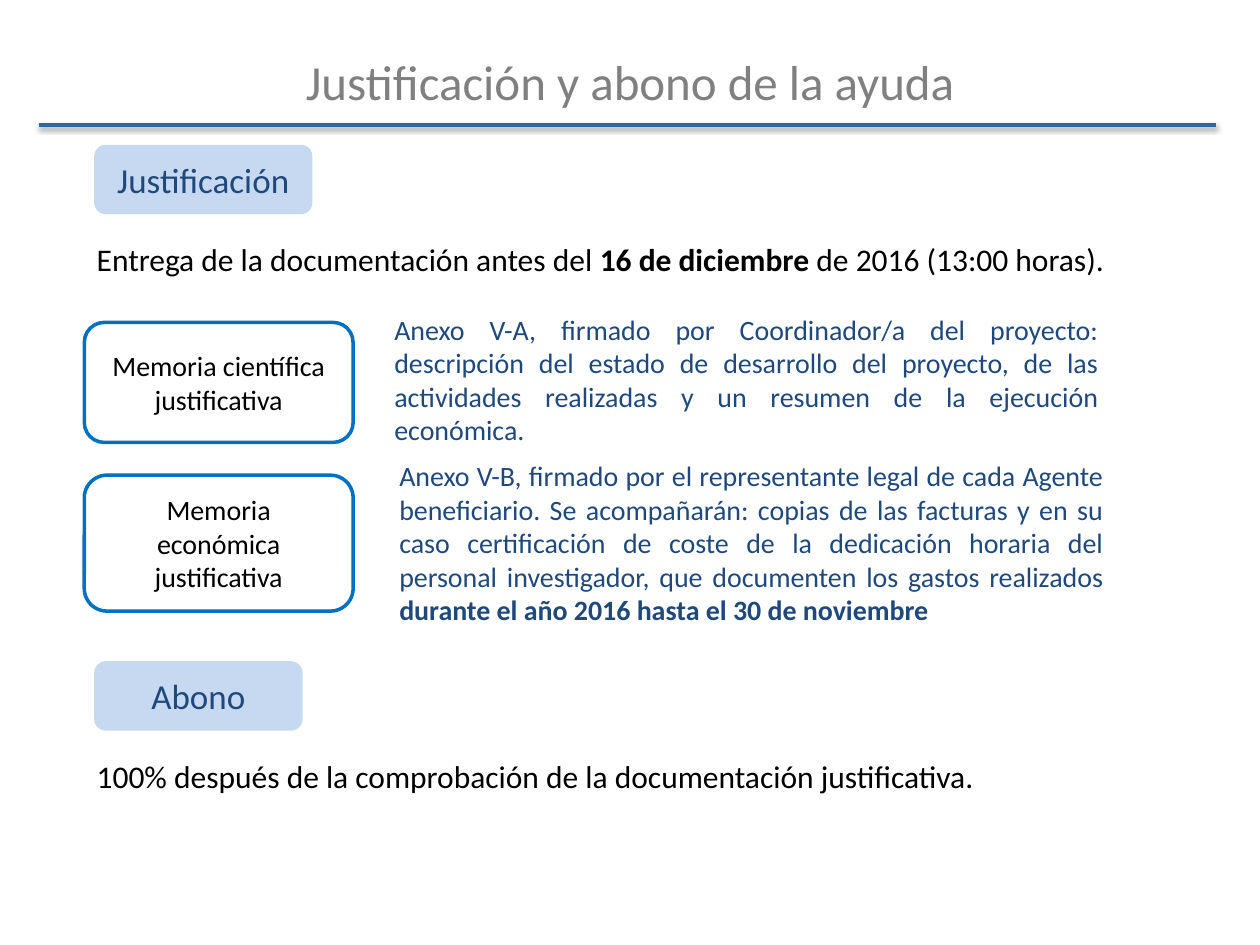
from lxml.etree import SubElement
from pptx import Presentation
from pptx.dml.color import RGBColor
from pptx.enum.shapes import MSO_CONNECTOR, MSO_SHAPE
from pptx.enum.text import MSO_ANCHOR, MSO_AUTO_SIZE, PP_ALIGN
from pptx.oxml.ns import qn
from pptx.util import Cm, Pt

FONT = "Calibri"
BLACK, GRAY, NAVY = "000000", "808080", "1F497D"
PALE_BLUE, BRIGHT_BLUE, RULE_BLUE = "C6D9F1", "0070C0", "336699"


def color(hex_value):
    return RGBColor.from_string(hex_value)


def write(shape, pieces, size, text_color, align, anchor=MSO_ANCHOR.TOP):
    """Fill a shape with one paragraph; every second piece is bold."""
    frame = shape.text_frame
    frame.word_wrap = True
    frame.vertical_anchor = anchor
    para = frame.paragraphs[0]
    para.alignment = align
    for index, piece in enumerate(pieces):
        span = para.add_run()
        span.text = piece
        span.font.name = FONT
        span.font.size = Pt(size)
        span.font.bold = index % 2 == 1
        span.font.color.rgb = color(text_color)


def add_text(page, place, pieces, size, text_color, align=PP_ALIGN.JUSTIFY,
             anchor=MSO_ANCHOR.TOP, grow=True):
    box = page.shapes.add_textbox(*map(Cm, place))
    write(box, pieces, size, text_color, align, anchor)
    if grow:
        box.text_frame.auto_size = MSO_AUTO_SIZE.SHAPE_TO_FIT_TEXT


def add_rounded(page, place, text, size, text_color, fill=None, line=None):
    box = page.shapes.add_shape(MSO_SHAPE.ROUNDED_RECTANGLE, *map(Cm, place))
    box.shadow.inherit = False
    if fill:
        box.fill.solid()
        box.fill.fore_color.rgb = color(fill)
    else:
        box.fill.background()
    if line:
        box.line.color.rgb = color(line)
        box.line.width = Pt(2)
    else:
        box.line.fill.background()
    write(box, [text], size, text_color, PP_ALIGN.CENTER, MSO_ANCHOR.MIDDLE)


def add_title_rule(page, left, right, top):
    rule = page.shapes.add_connector(
        MSO_CONNECTOR.STRAIGHT, Cm(left), Cm(top), Cm(right), Cm(top))
    rule.line.color.rgb = color(RULE_BLUE)
    rule.line.width = Pt(2)
    # Soft shadow straight below the line
    effects = SubElement(rule._element.spPr, qn("a:effectLst"))
    shadow = SubElement(effects, qn("a:outerShdw"), blurRad=str(Pt(3.1)),
                        dist=str(Pt(1.6)), dir="5400000", rotWithShape="0")
    tint = SubElement(shadow, qn("a:srgbClr"), val=BLACK)
    SubElement(tint, qn("a:alpha"), val="38000")


def add_section(page, top, width, heading, pieces):
    """Heading tag with its statement underneath."""
    add_rounded(page, (1.9, top, width, 1.4), heading, 20, NAVY, fill=PALE_BLUE)
    add_text(page, (1.7, top + 1.8, 21.2, 1.02), pieces, 18, BLACK)


def add_report(page, top, height, name, text_place, pieces):
    """Outlined report name with its description at the right."""
    add_rounded(page, (1.7, top, 5.42, height), name, 16, BLACK, line=BRIGHT_BLUE)
    add_text(page, text_place, pieces, 16, NAVY)


def main():
    deck = Presentation()
    deck.slide_width, deck.slide_height = Cm(25.4), Cm(19.05)
    page = deck.slides.add_slide(deck.slide_layouts[6])

    # Title
    add_title_rule(page, 0.78, 24.51, 2.52)
    add_text(page, (1.27, 0.76, 22.86, 1.75), ["Justificación y abono de la ayuda"],
             28, GRAY, PP_ALIGN.CENTER, MSO_ANCHOR.MIDDLE, grow=False)

    # Justification and its two reports
    add_section(page, 2.92, 4.4, "Justificación", [
        "Entrega de la documentación antes del ", "16 de diciembre ",
        "de 2016 (13:00 horas)."])
    add_report(page, 6.5, 2.42, "Memoria científica justificativa",
               (7.7, 6.17, 14.7, 3), [
                   "Anexo V-A, firmado por Coordinador/a del proyecto: "
                   "descripción del estado de desarrollo del proyecto, de las "
                   "actividades realizadas y un resumen de la ejecución económica."])
    add_report(page, 9.58, 2.74, "Memoria económica justificativa",
               (7.8, 9.12, 14.7, 3.68), [
                   "Anexo V-B, firmado por el representante legal de cada Agente "
                   "beneficiario. Se acompañarán: copias de las facturas y en su "
                   "caso certificación de coste de la dedicación horaria del "
                   "personal investigador, que documenten los gastos realizados ",
                   "durante el año 2016 hasta el 30 de noviembre"])

    # Payment
    add_section(page, 13.33, 4.2, "Abono", [
        "100% después de la comprobación de la documentación justificativa."])

    deck.save("out.pptx")


if __name__ == "__main__":
    main()
